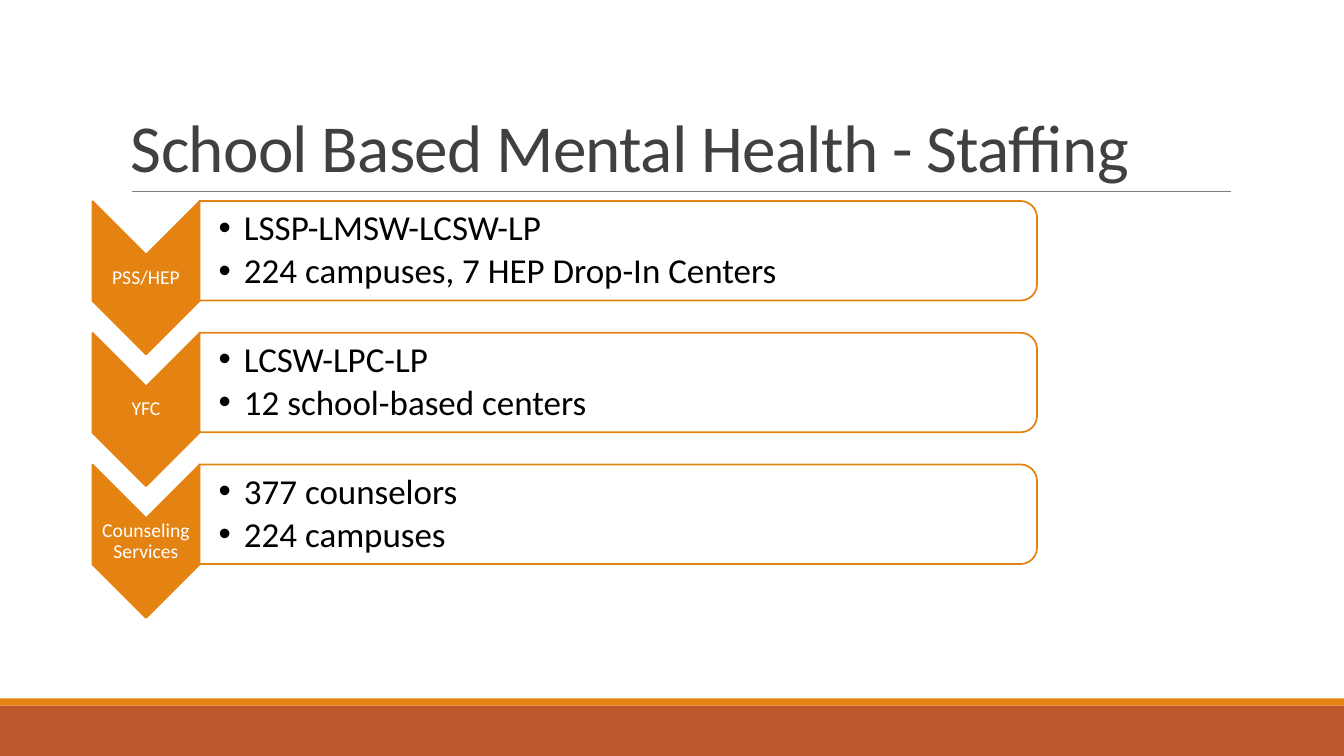
from lxml import etree
from pptx import Presentation
from pptx.dml.color import RGBColor
from pptx.enum import shapes, text
from pptx.oxml.ns import qn
from pptx.util import Cm, Pt

ORANGE, RUST, WHITE = "E48312", "BD582C", "FFFFFF"
FONT = "Calibri"
FIRST_ROW, ROW_PITCH = 6.32, 3.32
CHEVRON_X, CHEVRON_DROP = 3.68, 0.68
PANEL_X = 15.58

SERVICES = [
    ("PSS/HEP", ["LSSP-LMSW-LCSW-LP", "224 campuses, 7 HEP Drop-In Centers"]),
    ("YFC", ["LCSW-LPC-LP", "12 school-based centers"]),
    ("Counseling Services", ["377 counselors", "224 campuses"]),
]

TITLE = {
    "size": 48, "color": "404040", "spacing": -50,
    "frame": {"vertical_anchor": text.MSO_ANCHOR.BOTTOM},
    "para": {"line_spacing": 0.85},
}
LABEL = {
    "size": 14, "color": WHITE,
    "frame": {"vertical_anchor": text.MSO_ANCHOR.MIDDLE,
              "margin_left": Cm(0.02), "margin_right": Cm(0.02),
              "margin_top": Cm(0.02), "margin_bottom": Cm(0.02)},
    "para": {"line_spacing": 0.9, "alignment": text.PP_ALIGN.CENTER},
}
DETAIL = {
    "size": 25, "color": "000000", "bullet": True,
    "frame": {"vertical_anchor": text.MSO_ANCHOR.MIDDLE,
              "margin_left": Cm(0.48), "margin_right": Cm(0.05),
              "margin_top": Cm(0.05), "margin_bottom": Cm(0.05)},
    "para": {"line_spacing": 0.9, "space_after": Pt(3.75)},
}


def rgb(value):
    return RGBColor.from_string(value)


def set_all(target, values):
    for name, value in values.items():
        setattr(target, name, value)


def centred(x, y, width, height):
    """Return left, top, width, height for a box centred on x, y in cm."""
    return Cm(x - width / 2), Cm(y - height / 2), Cm(width), Cm(height)


def add_filled(page, kind, place, fill, line=None, rotation=0):
    shape = page.shapes.add_shape(kind, *place)
    shape.shadow.inherit = False
    shape.rotation = rotation
    shape.fill.solid()
    shape.fill.fore_color.rgb = rgb(fill)
    if line:
        shape.line.color.rgb = rgb(line)
        shape.line.width = Pt(1.25)
    else:
        shape.line.fill.background()
    return shape


def set_opacity(shape, percent):
    color = shape.fill._xPr.find(qn("a:solidFill"))[0]
    etree.SubElement(color, qn("a:alpha"), val=str(percent * 1000))


def add_bullet(para):
    props = para._p.get_or_add_pPr()
    indent = Cm(0.64)
    props.set("marL", str(indent))
    props.set("indent", str(-indent))
    etree.SubElement(props, qn("a:buFont"), typeface="Arial")
    etree.SubElement(props, qn("a:buChar"), char="•")


def add_text(page, place, lines, style):
    frame = page.shapes.add_textbox(*place).text_frame
    frame.word_wrap = True
    set_all(frame, style["frame"])
    for index, line in enumerate(lines):
        para = frame.paragraphs[0] if index == 0 else frame.add_paragraph()
        set_all(para, style["para"])
        if style.get("bullet"):
            add_bullet(para)
        span = para.add_run()
        span.text = line
        set_all(span.font, {"name": FONT, "size": Pt(style["size"])})
        span.font.color.rgb = rgb(style["color"])
        if "spacing" in style:
            span._r.get_or_add_rPr().set("spc", str(style["spacing"]))


def add_rule(page, left, right, y):
    rule = page.shapes.add_connector(
        shapes.MSO_CONNECTOR.STRAIGHT, Cm(left), Cm(y), Cm(right), Cm(y))
    rule.line.color.rgb = rgb("808080")
    rule.line.width = Pt(0.5)
    etree.SubElement(rule._element.spPr, qn("a:effectLst"))


def add_service(page, y, label, details):
    """Draw one row: a downward chevron with its label, then the panel."""
    chevron_y = y + CHEVRON_DROP
    add_filled(page, shapes.MSO_SHAPE.CHEVRON,
               centred(CHEVRON_X, chevron_y, 3.86, 2.7), ORANGE, ORANGE, 90)
    add_text(page, centred(CHEVRON_X, chevron_y, 2.7, 1.16), [label], LABEL)
    panel = add_filled(page, shapes.MSO_SHAPE.ROUND_2_SAME_RECTANGLE,
                       centred(PANEL_X, y, 2.51, 21.11), WHITE, ORANGE, 90)
    set_opacity(panel, 90)
    add_text(page, centred(PANEL_X - 0.05, y, 21, 2.26), details, DETAIL)


def main():
    deck = Presentation()
    deck.slide_width, deck.slide_height = Cm(33.87), Cm(19.05)
    page = deck.slides.add_slide(deck.slide_layouts[6])
    for top, height, color in [(17.78, 1.27, RUST), (17.6, 0.18, ORANGE)]:
        add_filled(page, shapes.MSO_SHAPE.RECTANGLE,
                   (0, Cm(top), deck.slide_width, Cm(height)), color)
    add_rule(page, 3.33, 31.01, 4.83)
    add_text(page, (Cm(3.05), Cm(0.79), Cm(27.94), Cm(4.04)),
             ["School Based Mental Health - Staffing"], TITLE)
    for row, (label, details) in enumerate(SERVICES):
        add_service(page, FIRST_ROW + row * ROW_PITCH, label, details)
    deck.save("out.pptx")


if __name__ == "__main__":
    main()
